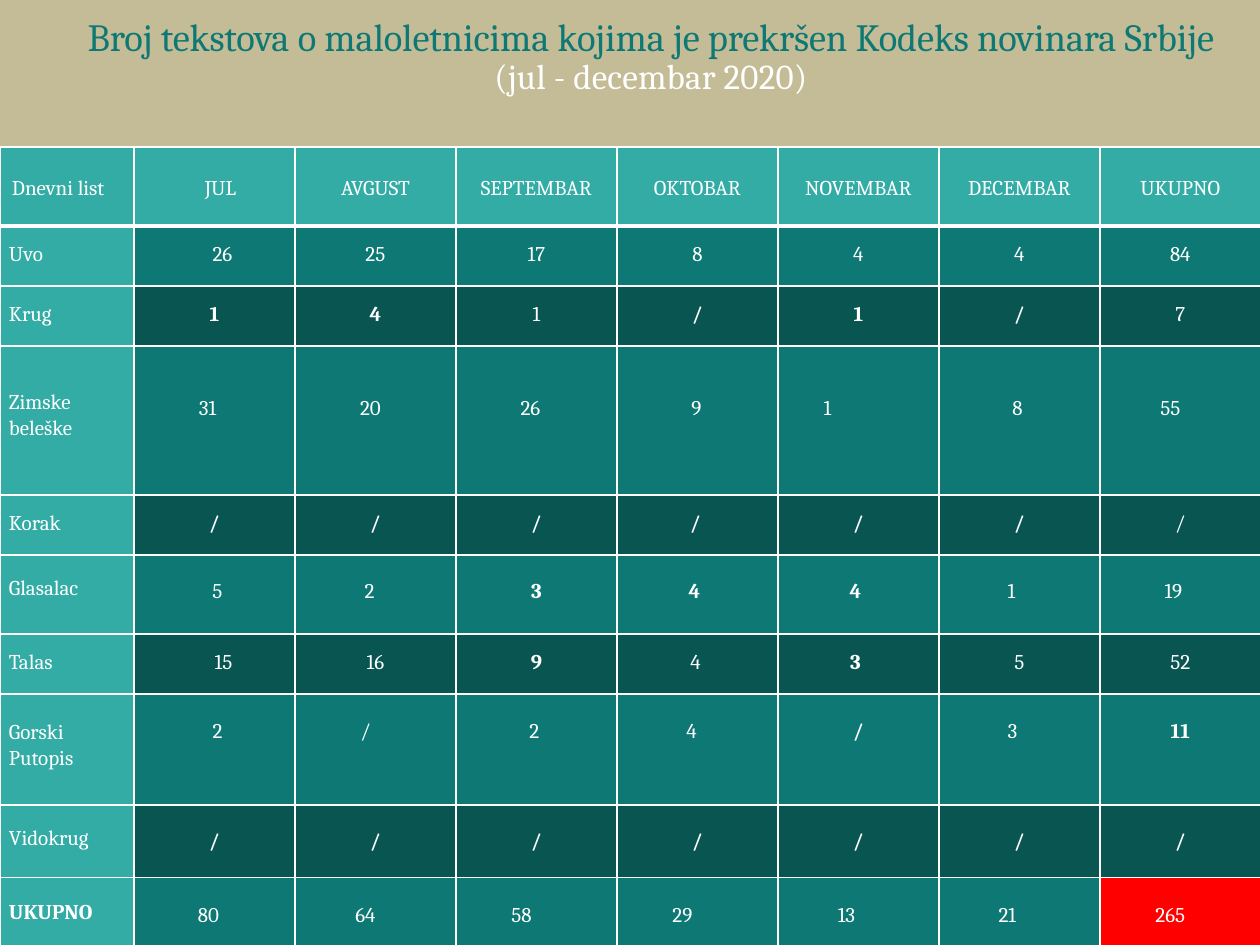
"""Build a slide with a monthly table of newspaper texts that breached the journalists' code."""
from dataclasses import dataclass

from lxml.etree import SubElement
from pptx import Presentation
from pptx.dml.color import RGBColor
from pptx.enum.text import MSO_ANCHOR as Anchor, PP_ALIGN as Align
from pptx.oxml.ns import qn
from pptx.util import Pt

EMU_PER_PX = 914400 // 126
FONT = "Cambria"
COLORS = {
    "sand": "C4BC96",
    "white": "FFFFFF",
    "label": "33ACA6",
    "teal": "0E7974",
    "dark": "095552",
    "red": "FF0000",
}
LABEL_WIDTH, MONTH_WIDTH, TABLE_TOP = 134, 161, 147
NO_SHIFT = (0,) * 7


@dataclass(frozen=True)
class Row:
    """One table row; shifts move values off the column centre in px."""
    label: str
    values: str
    height: int = 60
    label_top: int = 15
    value_top: int = 17
    bold: tuple[int, ...] = ()
    shifts: tuple[int, ...] = NO_SHIFT
    label_bold: bool = False


@dataclass(frozen=True)
class TitleLine:
    """One line of the heading."""
    text: str
    size: int
    color: str
    leading: float
    before: int
    tracking: int


ROWS = (
    Row("Dnevni list", "JUL AVGUST SEPTEMBAR OKTOBAR NOVEMBAR DECEMBAR UKUPNO",
        79, 28, 30, shifts=(6, 0, 0, 0, 0, 0, 0)),
    Row("Uvo", "26 25 17 8 4 4 84", shifts=(8, 0, 0, 0, 0, 0, 0)),
    Row("Krug", "1 4 1 / 1 / 7", bold=(0, 1, 3, 4, 5)),
    Row("Zimske beleške", "31 20 26 9 1 8 55", 149, 43, 51,
        shifts=(-7, -5, -6, -1, -31, -2, -10)),
    Row("Korak", "/ / / / / / /", bold=(0, 1, 2, 3, 4, 5), shifts=(0, 0, 0, -2, 0, 0, 0)),
    Row("Glasalac", "5 2 3 4 4 1 19", 79, 20, 25, (2, 3, 4), (3, -6, 0, -3, -3, -8, -7)),
    Row("Talas", "15 16 9 4 3 5 52", bold=(2, 4), shifts=(9, 0, 0, -2, -3, 0, 0)),
    Row("Gorski Putopis", "2 / 2 4 / 3 11", 111, 25, 26, (4, 6), (3, -10, -2, -6, 0, -7, 0)),
    Row("Vidokrug", "/ / / / / / /", 73, 20, 25, tuple(range(7))),
    Row("UKUPNO", "80 64 58 29 13 21 265", 72, 21, 26,
        shifts=(-6, -10, -15, -15, -12, -12, -10), label_bold=True),
)
TITLE = (
    TitleLine("Broj tekstova o maloletnicima kojima je prekršen Kodeks novinara Srbije",
              22, "teal", 24, 1, -7),
    TitleLine("(jul - decembar 2020)", 20, "white", 21.6, 0, 10),
)


def px(length: int) -> int:
    """Turn px into EMU."""
    return length * EMU_PER_PX


def rgb(name: str) -> RGBColor:
    """Look up a named colour."""
    return RGBColor.from_string(COLORS[name])


def style_font(paragraph, size: int, color: str, bold: bool = False) -> None:
    """Set the font of a whole paragraph."""
    font = paragraph.font
    font.name, font.size, font.bold = FONT, Pt(size), bold
    font.color.rgb = rgb(color)


def set_borders(cell, top: int, bottom: int) -> None:
    """Give a cell white borders, with top and bottom widths in points."""
    properties = cell._tc.get_or_add_tcPr()
    for side, width in (("L", 1), ("R", 1), ("T", top), ("B", bottom)):
        line = SubElement(properties, qn(f"a:ln{side}"), w=str(Pt(width)))
        fill = SubElement(line, qn("a:solidFill"))
        SubElement(fill, qn("a:srgbClr"), val=COLORS["white"])


def fill_cell(cell, text: str, color: str, margins: tuple[int, int, int],
              align: Align, bold: bool) -> None:
    """Write and colour one cell; margins are left, top and right."""
    cell.text = text
    cell.vertical_anchor = Anchor.TOP
    cell.margin_left, cell.margin_top, cell.margin_right = map(px, margins)
    cell.margin_bottom = 0
    cell.fill.solid()
    cell.fill.fore_color.rgb = rgb(color)
    paragraph = cell.text_frame.paragraphs[0]
    paragraph.alignment = align
    style_font(paragraph, 12, "white", bold)


def value_color(row_index: int, column: int) -> str:
    """Choose the fill of a value cell."""
    if row_index == 0:
        return "label"
    if row_index == len(ROWS) - 1 and column == 6:
        return "red"
    return "teal" if row_index % 2 else "dark"


def draw_table(slide) -> None:
    """Draw the table of counts per paper and month."""
    width = LABEL_WIDTH + 7 * MONTH_WIDTH
    height = sum(row.height for row in ROWS)
    table = slide.shapes.add_table(
        len(ROWS), 8, 0, px(TABLE_TOP), px(width), px(height)).table
    table.first_row = table.horz_banding = False
    for index, column in enumerate(table.columns):
        column.width = px(MONTH_WIDTH if index else LABEL_WIDTH)
    for index, row in enumerate(ROWS):
        table.rows[index].height = px(row.height)
        for cell in table.rows[index].cells:
            set_borders(cell, 3 if index == 1 else 1, 1 if index else 3)
        label = table.cell(index, 0)
        fill_cell(label, row.label, "label", (9 if index else 12, row.label_top, 16),
                  Align.LEFT, row.label_bold)
        label.text_frame.paragraphs[0].line_spacing = 1.07
        for column, (value, shift) in enumerate(zip(row.values.split(), row.shifts)):
            margins = (max(2 * shift, 0), row.value_top, max(-2 * shift, 0))
            fill_cell(table.cell(index, column + 1), value, value_color(index, column),
                      margins, Align.CENTER, column in row.bold)


def draw_title(slide) -> None:
    """Draw the two-line heading."""
    frame = slide.shapes.add_textbox(px(54), px(16), px(1194), px(83)).text_frame
    frame.word_wrap = True
    frame.margin_left = frame.margin_right = frame.margin_bottom = 0
    frame.margin_top = px(1)
    for index, line in enumerate(TITLE):
        paragraph = frame.add_paragraph() if index else frame.paragraphs[0]
        paragraph.alignment = Align.CENTER
        paragraph.line_spacing = Pt(line.leading)
        paragraph.space_before = Pt(line.before)
        style_font(paragraph, line.size, line.color)
        run = paragraph.add_run()
        run.text = line.text
        run._r.get_or_add_rPr().set("spc", str(line.tracking))


def main() -> None:
    """Build and save the presentation."""
    presentation = Presentation()
    presentation.slide_width, presentation.slide_height = px(1260), px(945)
    slide = presentation.slides.add_slide(presentation.slide_layouts[6])
    slide.background.fill.solid()
    slide.background.fill.fore_color.rgb = rgb("sand")
    draw_table(slide)
    draw_title(slide)
    presentation.save("out.pptx")


if __name__ == "__main__":
    main()
